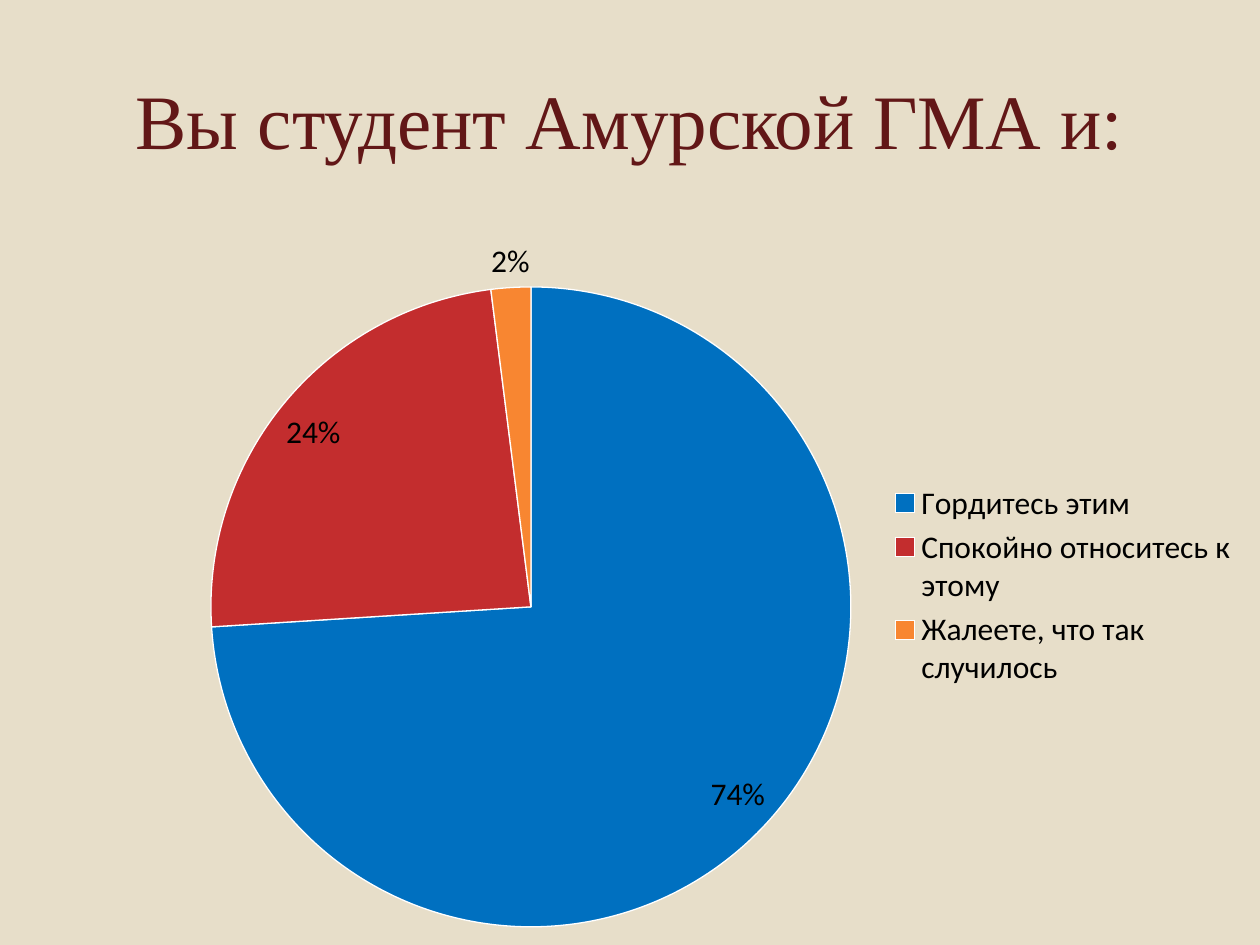
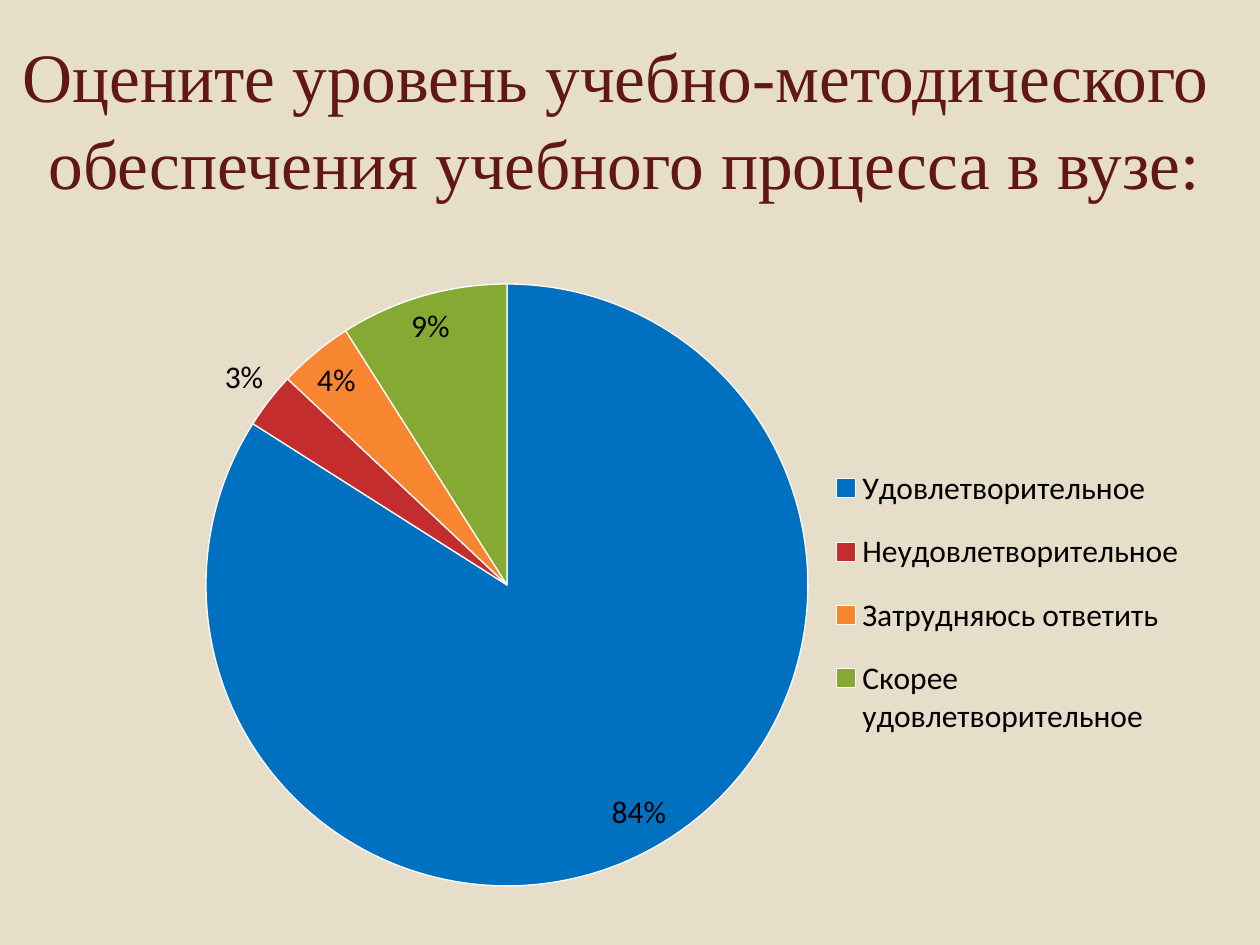
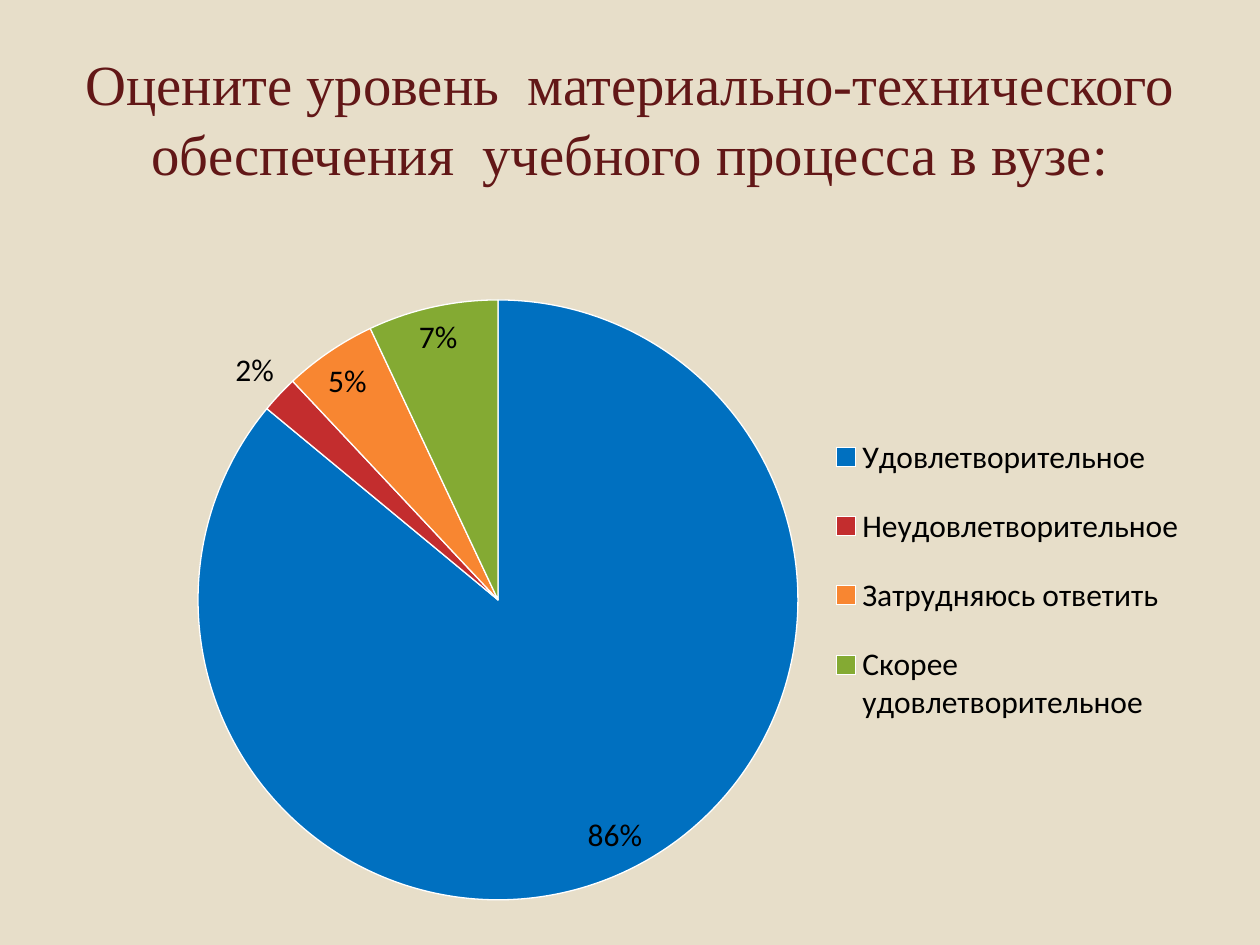
"""Build three survey slides, each with a title and a pie chart."""
import pptx
import pptx.chart.data
import pptx.dml.color
import pptx.enum.chart
import pptx.enum.text
import pptx.oxml
import pptx.oxml.ns
import pptx.util

RGB = pptx.dml.color.RGBColor
SAND = RGB(0xE7, 0xDE, 0xC9)
WINE = RGB(0x62, 0x17, 0x17)
BLACK = RGB(0, 0, 0)
WHITE = RGB(0xFF, 0xFF, 0xFF)
SLICES = [
    RGB(0x00, 0x70, 0xC0),
    RGB(0xC3, 0x2D, 0x2E),
    RGB(0xF8, 0x86, 0x31),
    RGB(0x84, 0xAA, 0x33),
]
PX = 914400 // 126

GRADES = [
    "Удовлетворительное",
    "Неудовлетворительное",
    "Затрудняюсь ответить",
    "Скорее удовлетворительное",
]
POLLS = [
    {
        "title": "Вы студент Амурской ГМА и:",
        "size": 44,
        "head": (63, 38, 1134, 157),
        "names": ["Гордитесь этим", "Спокойно относитесь к этому", "Жалеете, что так случилось"],
        "votes": [74, 24, 2],
        "frame": (184, 224, 1062, 721),
        "pie": (211, 287, 640, 640),
        "key": (882, 478, 362, 215),
    },
    {
        "title": "Оцените уровень учебно-методического  обеспечения учебного процесса в вузе:",
        "size": 39.6,
        "head": (0, 38, 1249, 157),
        "names": GRADES,
        "votes": [84, 3, 4, 9],
        "frame": (174, 214, 1032, 731),
        "pie": (206, 284, 602, 602),
        "key": (820, 444, 375, 317),
    },
    {
        "title": "Оцените уровень  материально-технического обеспечения  учебного процесса в вузе:",
        "size": 32.4,
        "head": (63, 38, 1134, 157),
        "names": GRADES,
        "votes": [86, 2, 5, 7],
        "frame": (174, 214, 1022, 731),
        "pie": (198, 300, 600, 600),
        "key": (820, 407, 375, 346),
    },
]


def scale(box):
    return [side * PX for side in box]


def style(font, size, name, color):
    font.size = pptx.util.Pt(size)
    font.name = name
    font.bold = False
    font.color.rgb = color


def write(shape, text, box, size, name="Times New Roman", color=WINE):
    shape.left, shape.top, shape.width, shape.height = scale(box)
    frame = shape.text_frame
    frame.word_wrap = True
    frame.auto_size = pptx.enum.text.MSO_AUTO_SIZE.NONE
    frame.vertical_anchor = pptx.enum.text.MSO_ANCHOR.MIDDLE
    para = frame.paragraphs[0]
    para.alignment = pptx.enum.text.PP_ALIGN.CENTER
    para.line_spacing = 1.04
    run = para.add_run()
    run.text = text
    style(run.font, size, name, color)


def place(node, index, box, frame, inner=False):
    """Fix a chart part at a box given in slide pixels."""
    for old in node.findall(pptx.oxml.ns.qn("c:layout")):
        node.remove(old)
    left, top, width, height = frame
    parts = {
        "x": (box[0] - left) / width,
        "y": (box[1] - top) / height,
        "w": box[2] / width,
        "h": box[3] / height,
    }
    tags = '<c:layoutTarget val="inner"/>' if inner else ""
    tags += '<c:xMode val="edge"/><c:yMode val="edge"/>'
    tags += "".join(f'<c:{key} val="{part:.4f}"/>' for key, part in parts.items())
    space = pptx.oxml.ns.nsdecls("c")
    node.insert(index, pptx.oxml.parse_xml(
        f"<c:layout {space}><c:manualLayout>{tags}</c:manualLayout></c:layout>"))


def draw(slide, poll):
    data = pptx.chart.data.CategoryChartData()
    data.categories = poll["names"]
    data.add_series("Series 1", poll["votes"])
    kinds = pptx.enum.chart
    chart = slide.shapes.add_chart(
        kinds.XL_CHART_TYPE.PIE, *scale(poll["frame"]), data).chart
    style(chart.font, 18, "Calibri", BLACK)
    chart.has_title = False
    chart.has_legend = True
    chart.legend.position = kinds.XL_LEGEND_POSITION.RIGHT
    chart.legend.include_in_layout = False
    plot = chart.plots[0]
    plot.vary_by_categories = True
    plot.has_data_labels = True
    labels = plot.data_labels
    labels.show_percentage = True
    labels.show_value = False
    labels.number_format = "0%"
    labels.number_format_is_linked = False
    labels.position = kinds.XL_LABEL_POSITION.BEST_FIT
    for spot, color in enumerate(SLICES[:len(poll["votes"])]):
        form = plot.series[0].points[spot].format
        form.fill.solid()
        form.fill.fore_color.rgb = color
        form.line.color.rgb = WHITE
        form.line.width = pptx.util.Pt(0.75)
    root = chart.element
    place(root.find(".//" + pptx.oxml.ns.qn("c:plotArea")), 0,
          poll["pie"], poll["frame"], inner=True)
    place(root.find(".//" + pptx.oxml.ns.qn("c:legend")), 1, poll["key"], poll["frame"])


def main():
    deck = pptx.Presentation()
    deck.slide_width = 1260 * PX
    deck.slide_height = 945 * PX
    back = deck.slide_master.background.fill
    back.solid()
    back.fore_color.rgb = SAND
    for poll in POLLS:
        slide = deck.slides.add_slide(deck.slide_layouts[5])
        write(slide.shapes.title, poll["title"], poll["head"], poll["size"])
        draw(slide, poll)
    deck.save("out.pptx")


if __name__ == "__main__":
    main()
